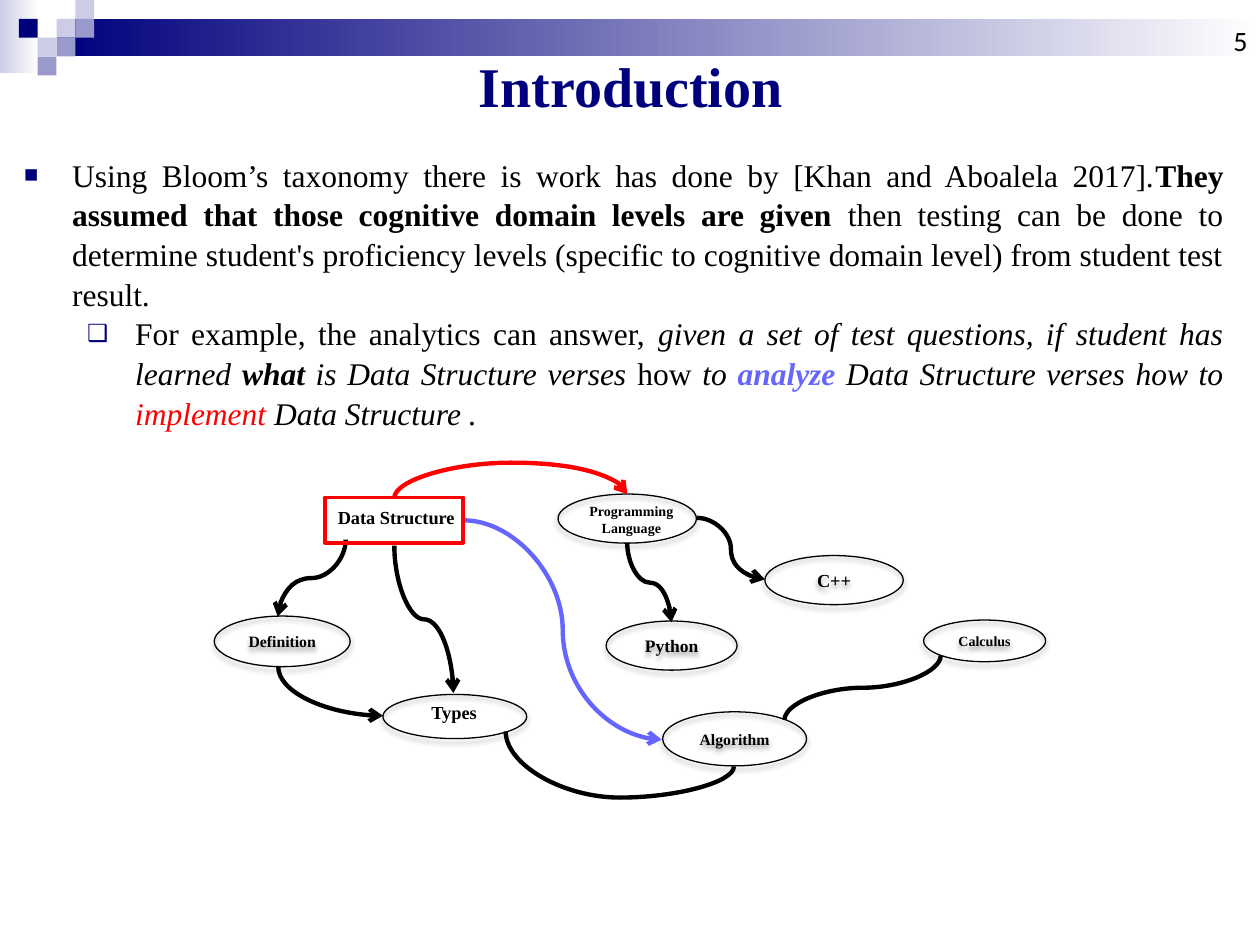
import lxml.etree
import pptx
import pptx.dml.color
import pptx.enum.shapes
import pptx.enum.text
import pptx.oxml.ns
import pptx.util

Cm = pptx.util.Cm
Pt = pptx.util.Pt
RGBColor = pptx.dml.color.RGBColor
SHAPE = pptx.enum.shapes.MSO_SHAPE
CURVE = pptx.enum.shapes.MSO_CONNECTOR.CURVE
ALIGN = pptx.enum.text.PP_ALIGN
ANCHOR = pptx.enum.text.MSO_ANCHOR
NO_FIT = pptx.enum.text.MSO_AUTO_SIZE.NONE

NAVY = RGBColor(0x00, 0x00, 0x7D)
LILAC = RGBColor(0x99, 0x99, 0xCC)
PALE = RGBColor(0xCC, 0xCC, 0xE6)
WHITE = RGBColor(0xFF, 0xFF, 0xFF)
BLACK = RGBColor(0x00, 0x00, 0x00)
RED = RGBColor(0xFF, 0x00, 0x00)
BLUE = RGBColor(0x65, 0x65, 0xFF)
SERIF = "Times New Roman"
SQUARE = 0.38

HEADER_SQUARES = [
    (3, 1, PALE), (4, 0, PALE), (4, 1, LILAC), (2, 2, PALE),
    (1, 1, NAVY), (3, 2, LILAC), (2, 3, LILAC),
]
TOPICS = [
    ((4.32, 12.42, 2.74, 1.02), "Definition", 9),
    ((12.22, 12.52, 2.64, 0.99), "Python", 10),
    ((11.25, 9.96, 2.79, 0.99), "", 8),
    ((7.72, 14, 2.9, 0.89), "", 10.5),
    ((18.62, 12.5, 2.46, 0.84), "Calculus", 8),
    ((13.36, 14.35, 2.9, 1.09), "Algorithm", 9),
    ((15.42, 11.2, 2.79, 0.99), "C++", 10.5),
]
LABELS = [
    ((8.28, 14.02, 1.75, 0.71), "Types", 10.5),
    ((11.23, 10.01, 3, 0.94), "Programming Language", 8),
    ((6.4, 10.08, 3.18, 0.71), "Data Structure", 10.5),
]
CURVES = [
    ((12.29, 11.3, 1.6, 0.89), dict(turn=270, flip="h", arrow="tailEnd")),
    ((5.51, 10.97, 1.55, 1.37), dict(turn=90, flip="hv", arrow="headEnd")),
    ((6.17, 12.88, 0.99, 2.11), dict(turn=270, flip="h", arrow="tailEnd", bend=None)),
    ((7.06, 11.89, 2.97, 1.19), dict(turn=270, flip="h", arrow="tailEnd")),
    ((10.26, 7.65, 0.08, 4.7),
     dict(turn=270, flip="hv", arrow="headEnd", color=RED, bend=-7.9)),
    ((12.14, 12.8, 0.71, 4.6), dict(turn=270, flip="h", bend=1.88)),
    ((16.74, 12.29, 1.3, 3.15), dict(turn=90, flip="hv")),
    ((9.35, 10.49, 3.99, 4.42), dict(arrow="tailEnd", color=BLUE)),
    ((14.05, 10.44, 1.37, 1.24), dict(arrow="tailEnd")),
]
BULLETS = [
    (0, "■", 0.97, [
        ("Using Bloom’s taxonomy there is work has done by [Khan and Aboalela 2017].", {}),
        ("They assumed that those cognitive domain levels are given ", dict(bold=True)),
        ("then testing can be done to determine student's proficiency levels "
         "(specific to cognitive domain level) from student test result.", {}),
    ]),
    (1, "❑", 2.24, [
        ("For example, the analytics can answer, ", {}),
        ("given a set of test questions, if student has learned ", dict(italic=True)),
        ("what", dict(italic=True, bold=True)),
        (" is Data Structure verses ", dict(italic=True)),
        ("how", {}),
        (" to ", dict(italic=True)),
        ("analyze", dict(italic=True, bold=True, color=BLUE)),
        (" Data Structure verses how to ", dict(italic=True)),
        ("implement", dict(italic=True, color=RED)),
        (" Data Structure .", dict(italic=True)),
    ]),
]


def add_xml(parent, tag, **attributes):
    """Append a DrawingML element to the parent and return it."""
    return lxml.etree.SubElement(parent, pptx.oxml.ns.qn("a:" + tag), attributes)


def write(para, text, size=18, font=SERIF, color=BLACK, bold=False, italic=False, align=None):
    """Add a formatted span of text to a paragraph."""
    span = para.add_run()
    span.text = text
    span.font.size = Pt(size)
    span.font.name = font
    span.font.color.rgb = color
    span.font.bold = bold
    span.font.italic = italic
    if align is not None:
        para.alignment = align


def place(box, left, top, width, height):
    """Move and resize a box, in centimetres."""
    box.left, box.top, box.width, box.height = map(Cm, (left, top, width, height))


def add_block(page, preset, frame, fill=None, fade=None, line=None, weight=0.75):
    """Add a preset shape, empty, filled, or fading from one colour to another."""
    box = page.shapes.add_shape(preset, *map(Cm, frame))
    box.shadow.inherit = False
    if fill is None:
        box.fill.background()
    elif fade is None:
        box.fill.solid()
        box.fill.fore_color.rgb = fill
    else:
        box.fill.gradient()
        box.fill.gradient_angle = 0
        for position, (stop, color) in enumerate(zip(box.fill.gradient_stops, (fill, fade))):
            stop.color.rgb = color
            stop.position = position
    if line is None:
        box.line.fill.background()
    else:
        box.line.color.rgb = line
        box.line.width = Pt(weight)
    return box


def add_topic(page, frame, text, size):
    """Add an outlined ellipse with a soft shadow and an optional name."""
    box = add_block(page, SHAPE.OVAL, frame, line=BLACK)
    effects = box._element.spPr.find(pptx.oxml.ns.qn("a:effectLst"))
    shadow = add_xml(effects, "outerShdw", blurRad=str(Pt(3.1)), dist=str(Pt(2)),
                     dir="5400000", rotWithShape="0")
    add_xml(add_xml(shadow, "srgbClr", val=str(BLACK)), "alpha", val="38000")
    if text:
        box.text_frame.word_wrap = False
        box.text_frame.vertical_anchor = ANCHOR.MIDDLE
        write(box.text_frame.paragraphs[0], text, size=size, bold=True, align=ALIGN.CENTER)


def add_label(page, frame, text, anchor=ANCHOR.TOP, **look):
    """Add a wrapping text box with one paragraph."""
    box = page.shapes.add_textbox(*map(Cm, frame))
    box.text_frame.word_wrap = True
    box.text_frame.vertical_anchor = anchor
    write(box.text_frame.paragraphs[0], text, **look)


def add_curve(page, frame, turn=0, flip="", arrow=None, color=BLACK, bend=0.5):
    """Add a curved connector, turned and flipped inside its frame."""
    left, top, width, height = frame
    start_x, end_x = (left + width, left) if "h" in flip else (left, left + width)
    start_y, end_y = (top + height, top) if "v" in flip else (top, top + height)
    curve = page.shapes.add_connector(CURVE, *map(Cm, (start_x, start_y, end_x, end_y)))
    curve.line.color.rgb = color
    curve.line.width = Pt(2.5)
    properties = curve._element.spPr
    properties.find(pptx.oxml.ns.qn("a:xfrm")).set("rot", str(turn * 60000))
    geometry = properties.find(pptx.oxml.ns.qn("a:prstGeom"))
    if bend is None:
        geometry.set("prst", "curvedConnector2")
    else:
        guides = geometry.find(pptx.oxml.ns.qn("a:avLst"))
        add_xml(guides, "gd", name="adj1", fmla=f"val {round(bend * 100000)}")
    if arrow:
        add_xml(properties.find(pptx.oxml.ns.qn("a:ln")), arrow, type="arrow")
    add_xml(properties, "effectLst")


def add_bullet(para, level, mark, margin, spans):
    """Fill a paragraph as a justified bullet with a hanging indent."""
    para.level = level
    para.line_spacing = 1.05
    para.space_before = Pt(0)
    for text, look in spans:
        write(para, text, align=ALIGN.JUSTIFY, **look)
    properties = para._p.get_or_add_pPr()
    properties.set("marL", str(Cm(margin)))
    properties.set("indent", str(Cm(-0.97)))
    add_xml(add_xml(properties, "buClr"), "srgbClr", val=str(NAVY))
    add_xml(properties, "buSzPct", val="75000")
    add_xml(properties, "buChar", char=mark)


def add_header(page):
    """Add the graded bands and the mosaic of squares."""
    add_block(page, SHAPE.RECTANGLE, (0, 0, 0.79, 1.47), fill=PALE, fade=WHITE)
    add_block(page, SHAPE.RECTANGLE, (1.14, 0.38, 24.26, 0.76), fill=NAVY, fade=WHITE)
    for column, row, color in HEADER_SQUARES:
        frame = (column * SQUARE, row * SQUARE, SQUARE, SQUARE)
        add_block(page, SHAPE.RECTANGLE, frame, fill=color)


def main():
    """Build the slide and save the deck."""
    deck = pptx.Presentation()
    deck.slide_width, deck.slide_height = Cm(25.4), Cm(19.05)
    page = deck.slides.add_slide(deck.slide_layouts[1])
    add_header(page)

    title, body = page.placeholders
    place(title, 2.72, 1.24, 19.99, 0.97)
    title.text_frame.auto_size = NO_FIT
    title.text_frame.vertical_anchor = ANCHOR.MIDDLE
    write(title.text_frame.paragraphs[0], "Introduction", size=32, color=NAVY,
          bold=True, align=ALIGN.CENTER)
    add_label(page, (24, 0, 1.4, 1.27), "5", anchor=ANCHOR.BOTTOM, size=16,
              font="Calibri", align=ALIGN.RIGHT)

    place(body, 0.23, 2.97, 24.69, 5.64)
    body.text_frame.auto_size = NO_FIT
    for index, bullet in enumerate(BULLETS):
        frame = body.text_frame
        add_bullet(frame.add_paragraph() if index else frame.paragraphs[0], *bullet)

    for topic in TOPICS:
        add_topic(page, *topic)
    for frame, look in CURVES:
        add_curve(page, frame, **look)
    add_block(page, SHAPE.RECTANGLE, (6.55, 10.03, 2.79, 0.91), line=RED, weight=2.25)
    for frame, text, size in LABELS:
        add_label(page, frame, text, size=size, bold=True, align=ALIGN.CENTER)
    deck.save("out.pptx")


if __name__ == "__main__":
    main()
